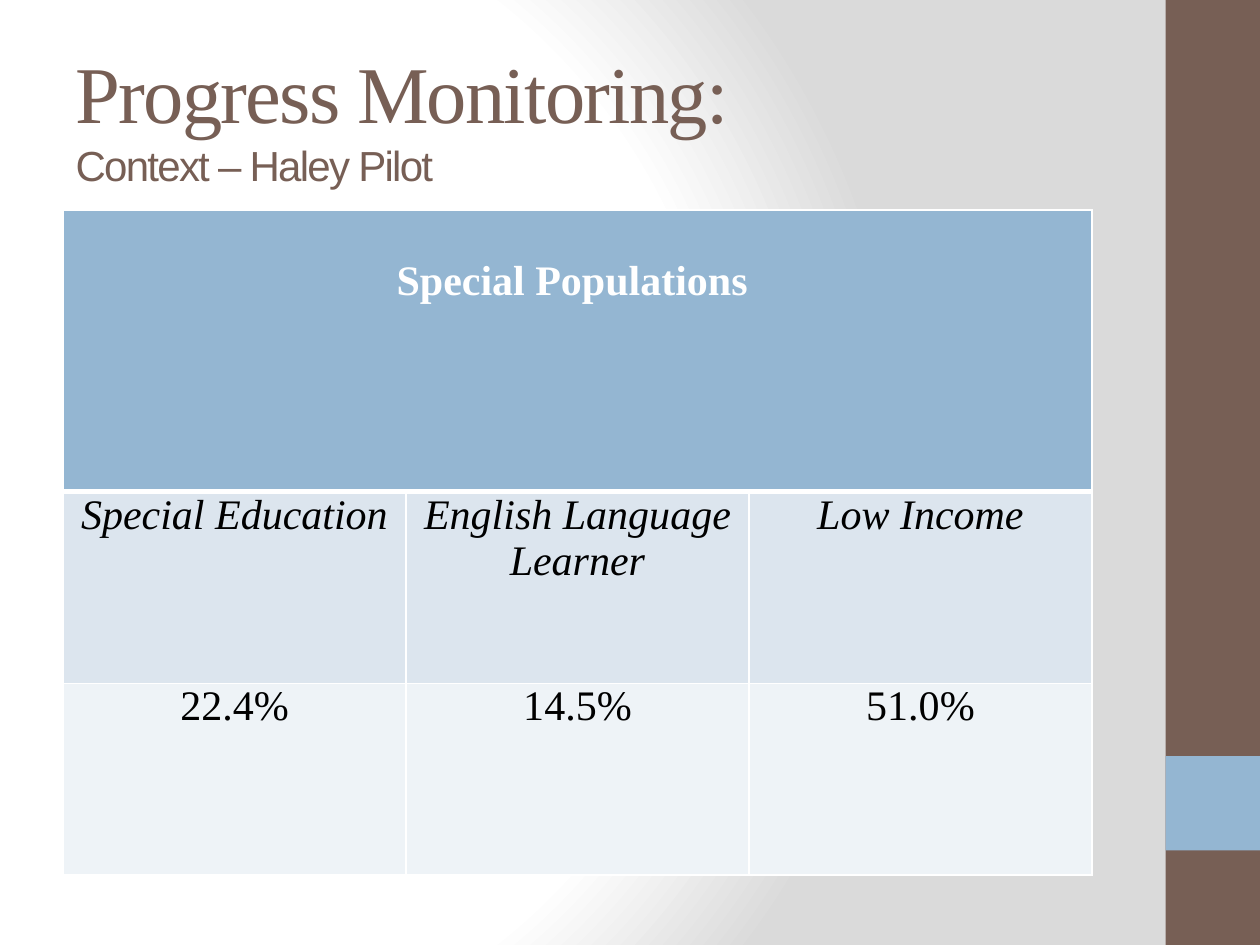
from lxml import etree
from pptx import Presentation
from pptx.dml.color import RGBColor
from pptx.enum.shapes import MSO_SHAPE as Shape
from pptx.enum.text import MSO_ANCHOR as Anchor, MSO_AUTO_SIZE as AutoSize, PP_ALIGN as Align
from pptx.oxml import parse_xml
from pptx.oxml.ns import nsdecls, qn
from pptx.util import Pt

COLORS = {
    "brown": "775F55", "blue": "94B6D2", "white": "FFFFFF", "black": "000000",
    "label": "DCE5EE", "value": "EEF3F7", "gray": "DADADA",
}
SERIF, SANS = "Times New Roman", "Arial"


class SlideBuilder:
    def __init__(self, slide):
        self.slide = slide

    def color(self, name):
        return RGBColor.from_string(COLORS[name])

    def background(self, stops):
        """Circular gradient; stops are (percent, color name)."""
        stop_xml = "".join(
            f'<a:gs pos="{percent * 1000}"><a:srgbClr val="{COLORS[name]}"/></a:gs>'
            for percent, name in stops)
        self.slide._element.cSld.insert(0, parse_xml(
            f'<p:bg {nsdecls("p", "a")}><p:bgPr><a:gradFill rotWithShape="1">'
            f'<a:gsLst>{stop_xml}</a:gsLst><a:path path="circle">'
            '<a:fillToRect l="20000" t="50000" r="100000" b="50000"/></a:path>'
            '</a:gradFill><a:effectLst/></p:bgPr></p:bg>'))

    def block(self, left, top, width, height, fill):
        block = self.slide.shapes.add_shape(
            Shape.RECTANGLE, Pt(left), Pt(top), Pt(width), Pt(height))
        block.shadow.inherit = False
        block.fill.solid()
        block.fill.fore_color.rgb = self.color(fill)
        block.line.fill.background()

    def title(self, left, top, width, height, lines):
        """Lines are (text, size, font name), parted by line breaks."""
        title = self.slide.shapes.title
        title.left, title.top, title.width, title.height = map(
            Pt, (left, top, width, height))
        frame = title.text_frame
        frame.auto_size = AutoSize.NONE
        frame.word_wrap = True
        frame.vertical_anchor = Anchor.MIDDLE
        paragraph = frame.paragraphs[0]
        paragraph.alignment = Align.LEFT
        for index, (text, size, font_name) in enumerate(lines):
            if index:
                paragraph.add_line_break()
            run = paragraph.add_run()
            run.text = text
            run.font.size, run.font.name = Pt(size), font_name
            run.font.color.rgb = self.color("brown")
            run.font._element.set("spc", "-100")

    def table(self, left, top, column_width, row_heights, column_count):
        table = self.slide.shapes.add_table(
            len(row_heights), column_count, Pt(left), Pt(top),
            Pt(column_width * column_count), Pt(sum(row_heights))).table
        for column in table.columns:
            column.width = Pt(column_width)
        for row, height in zip(table.rows, row_heights):
            row.height = Pt(height)
        return table

    def cell(self, cell, text, fill, color="black", bold=False, italic=False,
             margin_top=0, top_line=1, bottom_line=1):
        cell.text = text
        cell.margin_left = cell.margin_right = Pt(5)
        cell.margin_top, cell.margin_bottom = Pt(margin_top), 0
        paragraph = cell.text_frame.paragraphs[0]
        paragraph.alignment = Align.CENTER
        font = paragraph.font
        font.name, font.size, font.bold, font.italic = SERIF, Pt(24), bold, italic
        font.color.rgb = self.color(color)
        self.borders(cell, {"lnL": 1, "lnR": 1, "lnT": top_line, "lnB": bottom_line})
        cell.fill.solid()
        cell.fill.fore_color.rgb = self.color(fill)

    def borders(self, cell, widths):
        properties = cell._tc.get_or_add_tcPr()
        for side, width in widths.items():
            line = etree.SubElement(properties, qn(f"a:{side}"), w=str(Pt(width)))
            solid = etree.SubElement(line, qn("a:solidFill"))
            etree.SubElement(solid, qn("a:srgbClr"), val=COLORS["white"])


def main():
    presentation = Presentation()
    presentation.slide_width, presentation.slide_height = Pt(720), Pt(540)
    builder = SlideBuilder(presentation.slides.add_slide(presentation.slide_layouts[5]))

    # Background and side band
    builder.background([(0, "white"), (75, "white"), (100, "gray")])
    builder.block(666, 0, 54, 540, "brown")
    builder.block(666, 432, 54, 54, "blue")

    # Title
    builder.title(36, 21.6, 600, 90, [
        ("Progress Monitoring:", 46, SERIF), ("Context – Haley Pilot", 24, SANS)])

    # Special populations table
    populations = [("Special Education", "22.4%"),
                   ("English Language Learner", "14.5%"),
                   ("Low Income", "51.0%")]
    table = builder.table(36, 120, 196, [161, 109.5, 109.5], len(populations))
    table.cell(0, 0).merge(table.cell(0, len(populations) - 1))
    for column, (label, share) in enumerate(populations):
        heading = "" if column else "Special Populations\u00a0"
        builder.cell(table.cell(0, column), heading, "blue", "white", bold=True,
                     margin_top=27.6, bottom_line=3)
        builder.cell(table.cell(1, column), label, "label", italic=True, top_line=3)
        builder.cell(table.cell(2, column), share, "value")

    presentation.save("out.pptx")


if __name__ == "__main__":
    main()
